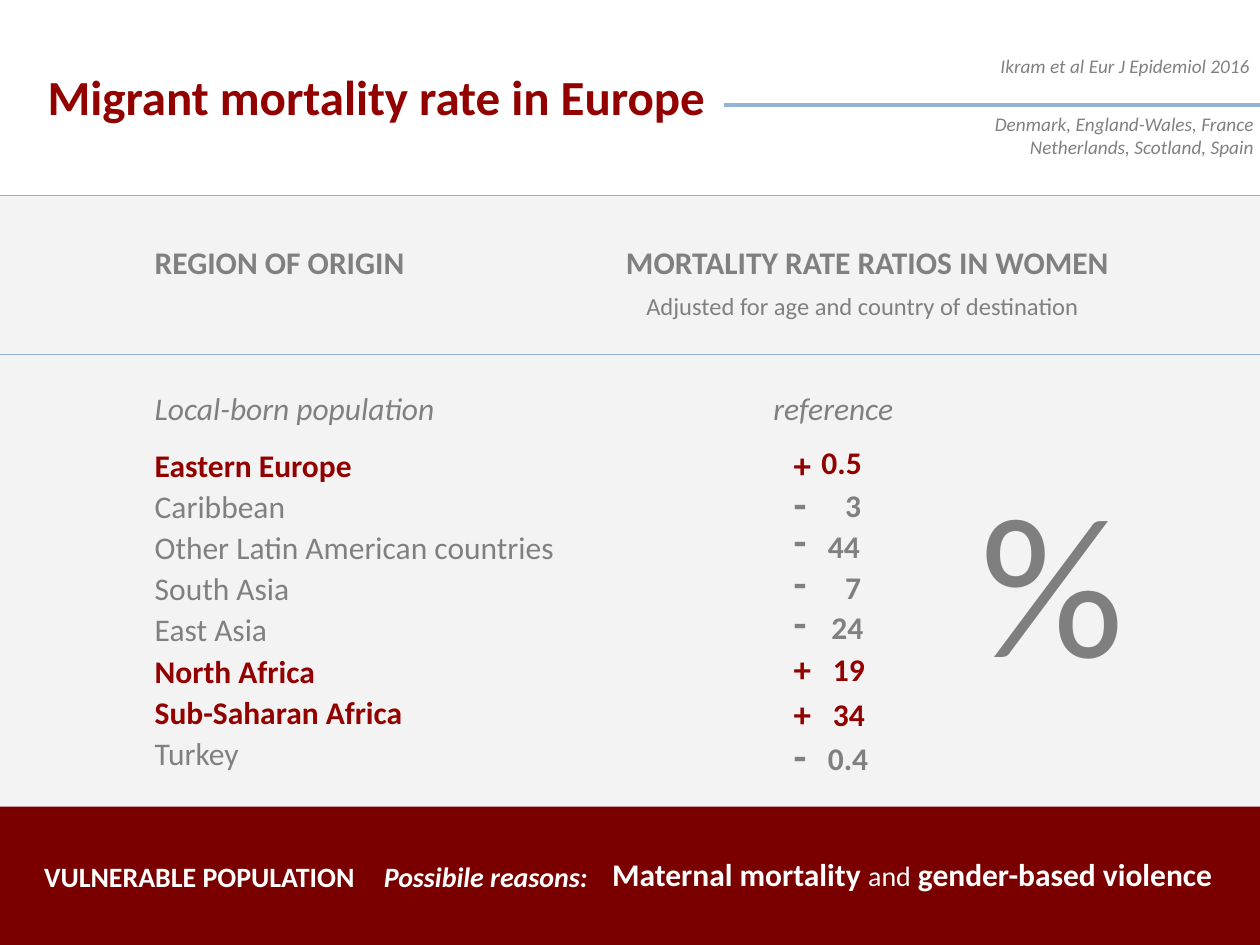
from lxml import etree
from pptx import Presentation
from pptx.dml.color import RGBColor
from pptx.enum.shapes import MSO_CONNECTOR, MSO_SHAPE
from pptx.enum.text import MSO_ANCHOR, PP_ALIGN
from pptx.oxml.ns import qn
from pptx.util import Cm, Pt

LINE = MSO_CONNECTOR.STRAIGHT
RECT = MSO_SHAPE.RECTANGLE
MID, TOP = MSO_ANCHOR.MIDDLE, MSO_ANCHOR.TOP
LEFT, RIGHT = PP_ALIGN.LEFT, PP_ALIGN.RIGHT


class Theme:
    font = "Calibri"
    red = RGBColor.from_string("920000")
    dark = RGBColor.from_string("7A0000")
    gray = RGBColor.from_string("808080")
    mid = RGBColor.from_string("7F7F7F")
    pale = RGBColor.from_string("F2F2F2")
    blue = RGBColor.from_string("95B3D7")
    white = RGBColor.from_string("FFFFFF")
    title, body, lead, sub, note = 28, 18, 16, 14, 11
    plus, minus, huge = 20, 24, 115


def put(box, lines, size, color, bold=False, italic=False, align=LEFT, wrap=False, anchor=TOP):
    frame = slide.shapes.add_textbox(*map(Cm, box)).text_frame
    frame.word_wrap = wrap
    frame.vertical_anchor = anchor
    frame.text = lines
    for para in frame.paragraphs:
        para.alignment = align
        font = para.font
        font.name, font.size, font.color.rgb = Theme.font, Pt(size), color
        font.bold, font.italic = bold, italic
    return frame


def rule(start, end, top, width):
    line = slide.shapes.add_connector(LINE, Cm(start), Cm(top), Cm(end), Cm(top))
    line.line.color.rgb = Theme.blue
    line.line.width = Pt(width)
    etree.SubElement(line.element.spPr, qn("a:effectLst"))


deck = Presentation()
deck.slide_width, deck.slide_height = Cm(25.4), Cm(19.05)
slide = deck.slides.add_slide(deck.slide_layouts[6])

bands = [
    ((0, 3.94, 26.59, 15.09), Theme.pale, 88),
    ((-1.27, 16.26, 27.74, 2.84), Theme.dark, 100),
]
for box, color, alpha in bands:
    band = slide.shapes.add_shape(RECT, *map(Cm, box))
    band.shadow.inherit = False
    band.fill.solid()
    band.fill.fore_color.rgb = color
    band.line.fill.background()
    if alpha < 100:
        tint = band.element.spPr.find(".//" + qn("a:srgbClr"))
        etree.SubElement(tint, qn("a:alpha"), val=str(alpha * 1000))

rule(14.6, 33.1, 2.11, 2.25)
rule(-1.5, 29.31, 3.94, 0.75)
rule(-2.49, 28.5, 7.14, 0.75)

put((0.71, 0.53, 13.89, 2.82), "Migrant mortality rate in Europe",
    Theme.title, Theme.red, bold=True, wrap=True, anchor=MID)
put((14.3, 0.97, 11.15, 0.74), "Ikram et al Eur J Epidemiol 2016",
    Theme.note, Theme.gray, italic=True, align=RIGHT, wrap=True)
put((18.19, 2.13, 7.34, 1.19), "Denmark, England-Wales, France\nNetherlands, Scotland, Spain",
    Theme.note, Theme.gray, italic=True, align=RIGHT, wrap=True)

put((2.87, 4.78, 5.59, 1.02), "REGION OF ORIGIN", Theme.body, Theme.gray, bold=True)
put((12.37, 4.78, 10.34, 1.02), "MORTALITY RATE RATIOS IN WOMEN", Theme.body, Theme.gray, bold=True)
put((12.78, 5.74, 9.32, 0.86), "Adjusted for age and country of destination", Theme.sub, Theme.gray)
put((2.87, 7.72, 6.27, 1.02), "Local-born population", Theme.body, Theme.gray, italic=True)
put((15.34, 7.72, 3, 1.02), "reference", Theme.body, Theme.gray, italic=True)

rows = [
    ("Eastern Europe", 4.52, "+", 8.81, "0.5", 16.31, 8.81),
    ("Caribbean", 3.23, "-", 9.5, "3", 16.79, 9.68),
    ("Other Latin American countries", 8.81, "-", 10.24, "44", 16.44, 10.49),
    ("South Asia", 3.33, "-", 11.1, "7", 16.79, 11.33),
    ("East Asia", 2.87, "-", 11.91, "24", 16.51, 12.14),
    ("North Africa", 3.78, "+", 12.93, "19", 16.54, 12.98),
    ("Sub-Saharan Africa", 5.54, "+", 13.84, "34", 16.54, 13.89),
    ("Turkey", 2.29, "-", 14.58, "0.4", 16.44, 14.78),
]
for i, (name, width, sign, rise, rate, left, top) in enumerate(rows):
    more = sign == "+"
    color = Theme.red if more else Theme.gray
    put((2.87, 8.86 + 0.83 * i, width, 1.02), name, Theme.body, color, bold=more)
    put((15.75, rise, 1.04 if more else 0.79, 1.12 if more else 1.27), sign,
        Theme.plus if more else Theme.minus, color, bold=True)
    put((left, top, 0.66 + 0.33 * len(rate), 1.02), rate, Theme.body, color, bold=True)

put((19.51, 9.07, 3.51, 5.18), "%", Theme.huge, Theme.mid)

put((0.64, 17.2, 10.54, 0.94), "VULNERABLE POPULATION", Theme.lead, Theme.white, bold=True, wrap=True)
put((7.49, 17.2, 4.7, 0.94), "Possibile reasons:", Theme.lead, Theme.white, bold=True, italic=True)
cause = put((12.09, 17.12, 12.85, 1.02), "", Theme.body, Theme.white, bold=True).paragraphs[0]
for words in ("Maternal mortality ", "and", " gender-based violence"):
    run = cause.add_run()
    run.text = words
    if words == "and":
        run.font.size, run.font.bold = Pt(Theme.lead), False

deck.save("out.pptx")
